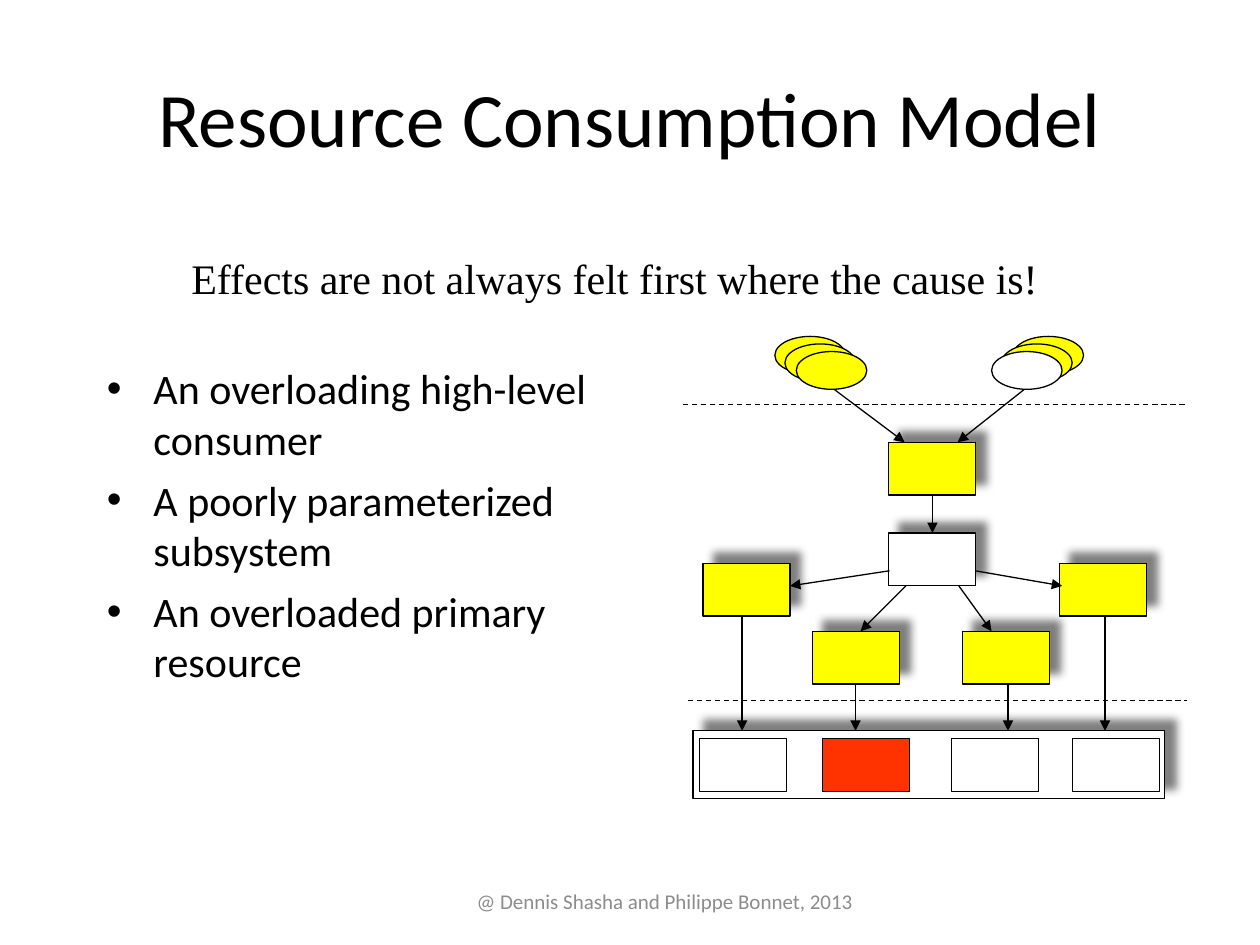
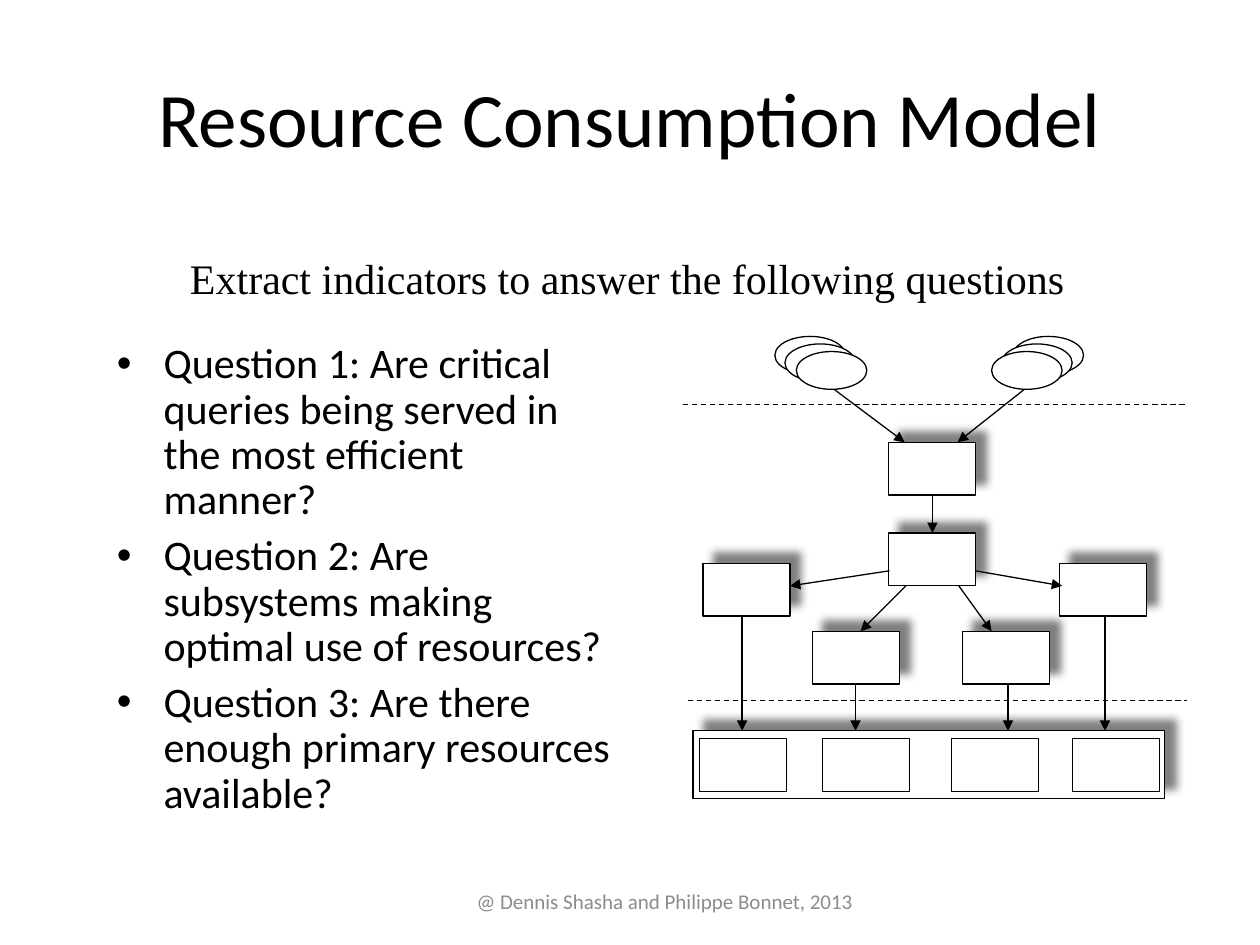
from lxml.etree import SubElement
from pptx import Presentation
from pptx.dml.color import RGBColor
from pptx.enum.dml import MSO_LINE
from pptx.enum.shapes import MSO_CONNECTOR, MSO_SHAPE
from pptx.enum.text import MSO_ANCHOR, PP_ALIGN
from pptx.oxml.ns import qn
from pptx.util import Inches, Pt

COLOURS = {
    "ink": "000000",
    "footer": "8C8C8C",
    "idle": "FFFFFF",
    "busy": "FFFF00",
    "overloaded": "FF3300",
    "shadow": "808080",
}
SANS, SERIF = "Calibri", "Times New Roman"
TITLE = {
    "font": {"name": SANS, "size": Pt(44)},
    "paragraph": {"alignment": PP_ALIGN.CENTER},
    "frame": {"word_wrap": True, "vertical_anchor": MSO_ANCHOR.MIDDLE},
}
FOOTER = {**TITLE, "font": {"name": SANS, "size": Pt(12)}}
MESSAGE = {
    "font": {"name": SERIF, "size": Pt(24)},
    "paragraph": {"line_spacing": 0.9, "space_before": Pt(6)},
    "frame": {"word_wrap": False, "vertical_anchor": MSO_ANCHOR.TOP},
}
BULLETS = {
    "font": {"name": SANS, "size": Pt(24)},
    "paragraph": {"space_before": Pt(6)},
    "frame": {"word_wrap": True, "vertical_anchor": MSO_ANCHOR.TOP},
}
TIGHT_BULLETS = {**BULLETS, "paragraph": MESSAGE["paragraph"]}

QUERY_SIZE = (0.56, 0.3)
BOX_SIZE = (0.69, 0.42)
QUERY_STEP = 0.06
LEFT_QUERIES = (6.15, 6.23, 6.32)
RIGHT_QUERIES = (8.04, 7.95, 7.87)
SUBSYSTEMS = ((7.05, 3.51), (5.58, 4.47), (6.45, 5.01), (7.64, 5.01), (8.41, 4.47))
EXECUTOR = (7.05, 4.23)
RESOURCES = (5.55, 6.53, 7.55, 8.51)
OVERLOADED_RESOURCE = 6.53
FLOWS = (
    (8.13, 3.09, 7.6, 3.51),
    (6.62, 3.09, 7.18, 3.51),
    (7.4, 3.93, 7.4, 4.23),
    (7.06, 4.53, 6.27, 4.65),
    (7.74, 4.53, 8.43, 4.65),
    (7.19, 4.65, 6.83, 5.01),
    (7.61, 4.65, 7.87, 5.01),
    (5.89, 4.89, 5.89, 5.8),
    (6.79, 5.43, 6.79, 5.8),
    (8, 5.43, 8, 5.8),
    (8.77, 4.89, 8.77, 5.8),
)
LEVEL_BORDERS = ((5.42, 3.21, 9.42, 3.21), (5.46, 5.56, 9.42, 5.56))


def apply(target, values):
    """Set each named attribute of the target."""
    for name, value in values.items():
        setattr(target, name, value)


class Deck:
    """Hold the shared style and the current slide."""

    def __init__(self):
        """Start an empty 4:3 presentation."""
        self.deck = Presentation()
        apply(self.deck, {"slide_width": Inches(10), "slide_height": Inches(7.5)})

    def colour(self, name):
        """Return a named colour."""
        return RGBColor.from_string(COLOURS[name])

    def new_slide(self):
        """Add a slide with the common title and footer."""
        self.slide = self.deck.slides.add_slide(self.deck.slide_layouts[6])
        self.canvas = self.slide.shapes
        self.text((0.5, 0.3, 9, 1.25), ["Resource Consumption Model"], TITLE)
        self.text((3.42, 6.95, 3.75, 0.4), ["@ Dennis Shasha and Philippe Bonnet, 2013 "], FOOTER, "footer")

    def text(self, place, lines, style, colour="ink"):
        """Add a text box and return its paragraphs."""
        frame = self.slide.shapes.add_textbox(*map(Inches, place)).text_frame
        apply(frame, style["frame"])
        for index, line in enumerate(lines):
            paragraph = frame.add_paragraph() if index else frame.paragraphs[0]
            paragraph.text = line
            apply(paragraph, style["paragraph"])
            for run in paragraph.runs:
                apply(run.font, style["font"])
                run.font.color.rgb = self.colour(colour)
        return frame.paragraphs

    def bullets(self, place, points, style):
        """Add a bulleted list with hanging indents."""
        for point in self.text(place, points, style):
            properties = point._p.get_or_add_pPr()
            properties.set("marL", str(Inches(0.37)))
            properties.set("indent", str(Inches(-0.37)))
            SubElement(properties, qn("a:buFont"), typeface="Arial")
            SubElement(properties, qn("a:buChar"), char="•")

    def outline(self, line):
        """Give a line the thin ink stroke."""
        line.color.rgb = self.colour("ink")
        line.width = Pt(0.75)

    def node(self, kind, corner, size, state, raised=False):
        """Add one component, filled by its state."""
        node = self.canvas.add_shape(kind, *map(Inches, (*corner, *size)))
        node.fill.solid()
        node.fill.fore_color.rgb = self.colour(state)
        self.outline(node.line)
        node.shadow.inherit = False
        if raised:
            effects = node._element.spPr.find(qn("a:effectLst"))
            shadow = SubElement(effects, qn("a:outerShdw"), blurRad=str(Pt(5)),
                                dist=str(Pt(8.5)), dir=str(315 * 60000),
                                algn="ctr", rotWithShape="0")
            SubElement(shadow, qn("a:srgbClr"), val=COLOURS["shadow"])

    def connector(self, ends, dashed=False):
        """Add a dashed border or an arrow."""
        connector = self.canvas.add_connector(MSO_CONNECTOR.STRAIGHT, *map(Inches, ends))
        self.outline(connector.line)
        if dashed:
            connector.line.dash_style = MSO_LINE.DASH
        else:
            SubElement(connector.line._get_or_add_ln(), qn("a:tailEnd"), type="triangle")
        SubElement(connector._element.spPr, qn("a:effectLst"))

    def consumption_model(self, busy="idle", overloaded="idle", grouped=False):
        """Draw queries, subsystems and primary resources."""
        if grouped:
            self.canvas = self.slide.shapes.add_group_shape().shapes
        box = MSO_SHAPE.RECTANGLE
        self.node(box, (5.5, 5.8), (3.74, 0.54), "idle", raised=True)
        for corner in SUBSYSTEMS:
            self.node(box, corner, BOX_SIZE, busy, raised=True)
        self.node(box, EXECUTOR, BOX_SIZE, "idle", raised=True)
        for left in RESOURCES:
            state = overloaded if left == OVERLOADED_RESOURCE else "idle"
            self.node(box, (left, 5.86), BOX_SIZE, state)
        for stack, front in ((LEFT_QUERIES, busy), (RIGHT_QUERIES, "idle")):
            for depth, (left, state) in enumerate(zip(stack, (busy, busy, front))):
                self.node(MSO_SHAPE.OVAL, (left, 2.67 + depth * QUERY_STEP), QUERY_SIZE, state)
        for flow in FLOWS:
            self.connector(flow)
        for border in LEVEL_BORDERS:
            self.connector(border, dashed=True)


def main():
    """Build and save both slides."""
    deck = Deck()

    deck.new_slide()
    deck.bullets((0.75, 2.83, 4.17, 3.83), [
        "An overloading high-level consumer",
        "A poorly parameterized subsystem",
        "An overloaded primary resource",
    ], BULLETS)
    deck.consumption_model("busy", "overloaded")
    deck.text((1.42, 2, 6.92, 0.95), ["Effects are not always felt first where the cause is!"], MESSAGE)

    deck.new_slide()
    deck.bullets((0.83, 2.67, 4.17, 3.95), [
        "Question 1: Are critical queries being served in \nthe most efficient manner?",
        "Question 2: Are subsystems making optimal use of resources?",
        "Question 3: Are there enough primary resources available?",
    ], TIGHT_BULLETS)
    deck.consumption_model(grouped=True)
    deck.text((1.41, 2, 7.14, 0.95), ["Extract indicators to answer the following questions"], MESSAGE)

    deck.deck.save("out.pptx")


if __name__ == "__main__":
    main()
